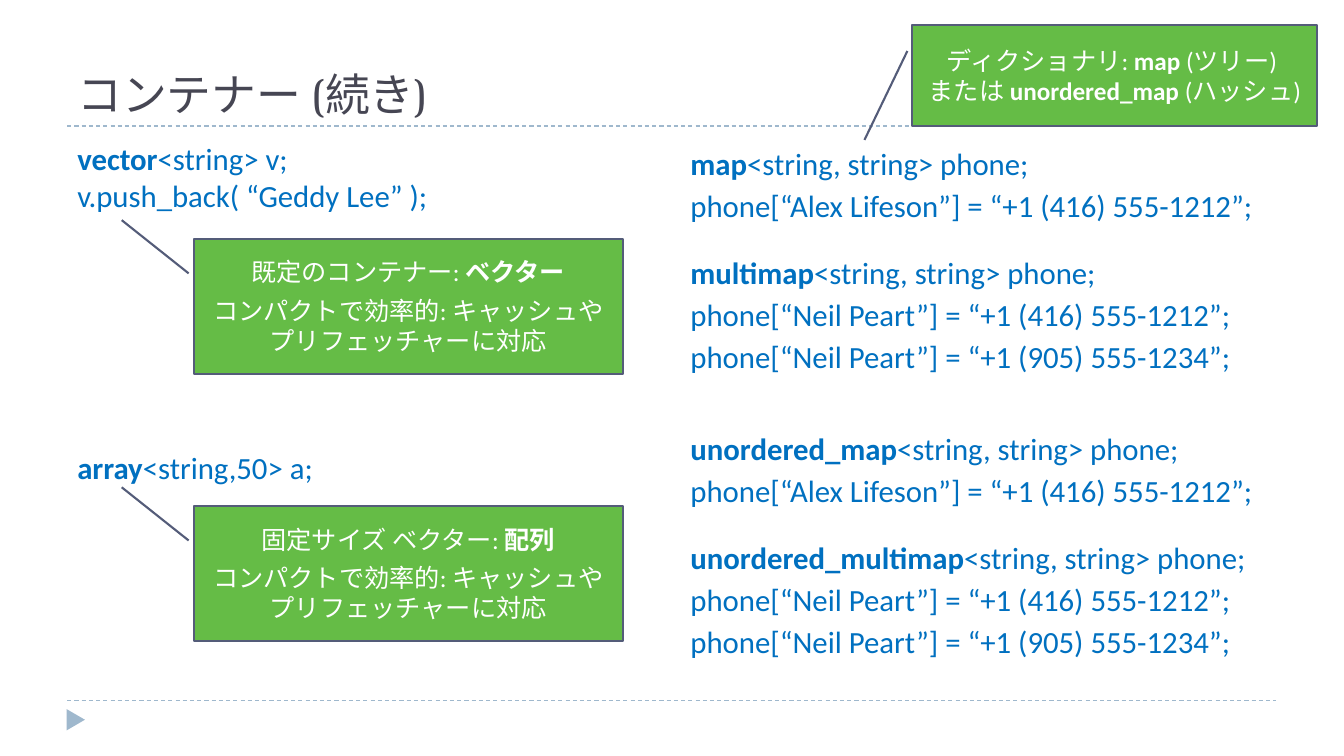
from dataclasses import dataclass

from lxml import etree
from pptx import Presentation
from pptx.dml.color import RGBColor
from pptx.enum.dml import MSO_LINE
from pptx.enum.shapes import MSO_CONNECTOR, MSO_SHAPE
from pptx.enum.text import MSO_ANCHOR, MSO_AUTO_SIZE, PP_ALIGN
from pptx.oxml.ns import qn
from pptx.util import Pt

DASH = MSO_LINE.DASH
STRAIGHT = MSO_CONNECTOR.STRAIGHT
CALLOUT, TRIANGLE = MSO_SHAPE.LINE_CALLOUT_1, MSO_SHAPE.ISOSCELES_TRIANGLE
MIDDLE, BOTTOM, TOP = MSO_ANCHOR.MIDDLE, MSO_ANCHOR.BOTTOM, MSO_ANCHOR.TOP
LEFT, CENTER = PP_ALIGN.LEFT, PP_ALIGN.CENTER
FIXED_SIZE = MSO_AUTO_SIZE.NONE
TWO_CONTENT = 3


@dataclass(frozen=True)
class Theme:
    title_font: str = "TeX Gyre Bonum"
    body_font: str = "Calibri"
    title_size: int = 32
    code_size: int = 22
    note_size: int = 18
    title: RGBColor = RGBColor(0x46, 0x46, 0x53)
    code: RGBColor = RGBColor(0x00, 0x70, 0xC0)
    note: RGBColor = RGBColor(0xFF, 0xFF, 0xFF)
    note_fill: RGBColor = RGBColor(0x65, 0xBC, 0x46)
    note_line: RGBColor = RGBColor(0x54, 0x5C, 0x79)
    rule: RGBColor = RGBColor(0x9F, 0xB8, 0xCD)


THEME = Theme()

ALEX = "\nphone[“Alex Lifeson”] = “+1 (416) 555-1212”;"
NEIL = ("\nphone[“Neil Peart”] = “+1 (416) 555-1212”;"
        "\nphone[“Neil Peart”] = “+1 (905) 555-1234”;")
PHONE = "<string, string> phone;"
COMPACT = "コンパクトで効率的: キャッシュやプリフェッチャーに対応"

# Each paragraph: space before, then runs of (text, bold)
SEQUENCES = [
    (6, [("vector", True), ("<string> v;\nv.push_back( “Geddy Lee” );", False)]),
    (168, [("array", True), ("<string,50> a;", False)]),
]
MAPS = [
    (gap, [(container, True), (PHONE + entries, False)])
    for gap, container, entries in [
        (6, "map", ALEX),
        (18, "multimap", NEIL),
        (36, "unordered_map", ALEX),
        (18, "unordered_multimap", NEIL),
    ]
]
ARRAY_NOTE = [
    (6, [("固定サイズ ベクター: ", False), ("配列", True)]),
    (6, [(COMPACT, False)]),
]
VECTOR_NOTE = [
    (6, [("既定のコンテナー: ", False), ("ベクター", True)]),
    (6, [(COMPACT, False)]),
]
MAP_NOTE = [
    (6, [("ディクショナリ: ", False), ("map ", True), ("(ツリー) \nまたは ", False),
         ("unordered_map ", True), ("(ハッシュ)", False)]),
]


def place(shape, box):
    shape.left, shape.top, shape.width, shape.height = (Pt(side) for side in box)


def write(frame, paragraphs, font, size, color, align, anchor, leading=None):
    """Fill a frame with paragraphs, turning each newline into a line break."""
    frame.word_wrap = True
    frame.auto_size = FIXED_SIZE
    frame.vertical_anchor = anchor
    for index, (gap, pieces) in enumerate(paragraphs):
        paragraph = frame.add_paragraph() if index else frame.paragraphs[0]
        paragraph.alignment = align
        paragraph.space_before = Pt(gap)
        if leading:
            paragraph.line_spacing = Pt(leading)
        for text, bold in pieces:
            for row, line in enumerate(text.split("\n")):
                if row:
                    paragraph.add_line_break()
                if line:
                    run = paragraph.add_run()
                    run.text = line
                    run.font.name = font
                    run.font.size = Pt(size)
                    run.font.bold = bold
                    run.font.color.rgb = color


def add_rule(slide, left, top, width):
    rule = slide.shapes.add_connector(
        STRAIGHT, Pt(left), Pt(top), Pt(left + width), Pt(top))
    rule.line.color.rgb = THEME.rule
    rule.line.width = Pt(0.75)
    rule.line.dash_style = DASH
    etree.SubElement(rule._element.spPr, qn("a:effectLst"))


def add_frame(slide, box):
    """Rules at the top and bottom of the box, with a page marker below."""
    left, top, width, height = box
    for level in (top, top + height):
        add_rule(slide, left, level, width)
    marker = slide.shapes.add_shape(TRIANGLE, 0, 0, 0, 0)
    place(marker, (left - 1.4, top + height + 7.2, 15.1, 13))
    marker.rotation = 90
    marker.shadow.inherit = False
    marker.fill.solid()
    marker.fill.fore_color.rgb = THEME.rule
    marker.line.fill.background()


def fill_title(title, box, text):
    place(title, box)
    write(title.text_frame, [(0, [(text, False)])], THEME.title_font,
          THEME.title_size, THEME.title, LEFT, BOTTOM)


def fill_code(body, box, paragraphs, leading=None):
    place(body, box)
    write(body.text_frame, paragraphs, THEME.body_font, THEME.code_size,
          THEME.code, LEFT, TOP, leading)
    for paragraph in body.text_frame.paragraphs:
        properties = paragraph._p.get_or_add_pPr()
        properties.set("marL", "0")
        properties.set("indent", "0")
        etree.SubElement(properties, qn("a:buNone"))


def add_note(slide, box, paragraphs, tip_y, tip_x):
    """Callout whose tip is given as shares of the box height and width."""
    note = slide.shapes.add_shape(CALLOUT, 0, 0, 0, 0)
    place(note, box)
    for index, share in enumerate((0.256, -0.012, tip_y, tip_x)):
        note.adjustments[index] = share
    note.shadow.inherit = False
    note.fill.solid()
    note.fill.fore_color.rgb = THEME.note_fill
    note.line.color.rgb = THEME.note_line
    note.line.width = Pt(1.5)
    write(note.text_frame, paragraphs, THEME.body_font, THEME.note_size,
          THEME.note, CENTER, MIDDLE)


def build_containers(slide):
    margin, column_top, column_width, column_height = 48, 96, 424, 389
    add_frame(slide, (margin, 90, 863.5, 410.4))
    title, sequences, maps = slide.placeholders
    fill_title(title, (margin, 18, 864, 72), "コンテナー (続き)")
    fill_code(sequences, (margin, column_top, column_width, column_height), SEQUENCES)
    fill_code(maps, (486, column_top, column_width, column_height), MAPS, leading=30)
    for top, paragraphs in ((361.4, ARRAY_NOTE), (170.6, VECTOR_NOTE)):
        add_note(slide, (138.4, top, 306.4, 96.5), paragraphs, -0.138, -0.168)
    add_note(slide, (651.6, 18, 289.4, 72), MAP_NOTE, 1.139, -0.118)


def main():
    deck = Presentation()
    deck.slide_width, deck.slide_height = Pt(960), Pt(540)
    build_containers(deck.slides.add_slide(deck.slide_layouts[TWO_CONTENT]))
    deck.save("out.pptx")


if __name__ == "__main__":
    main()
